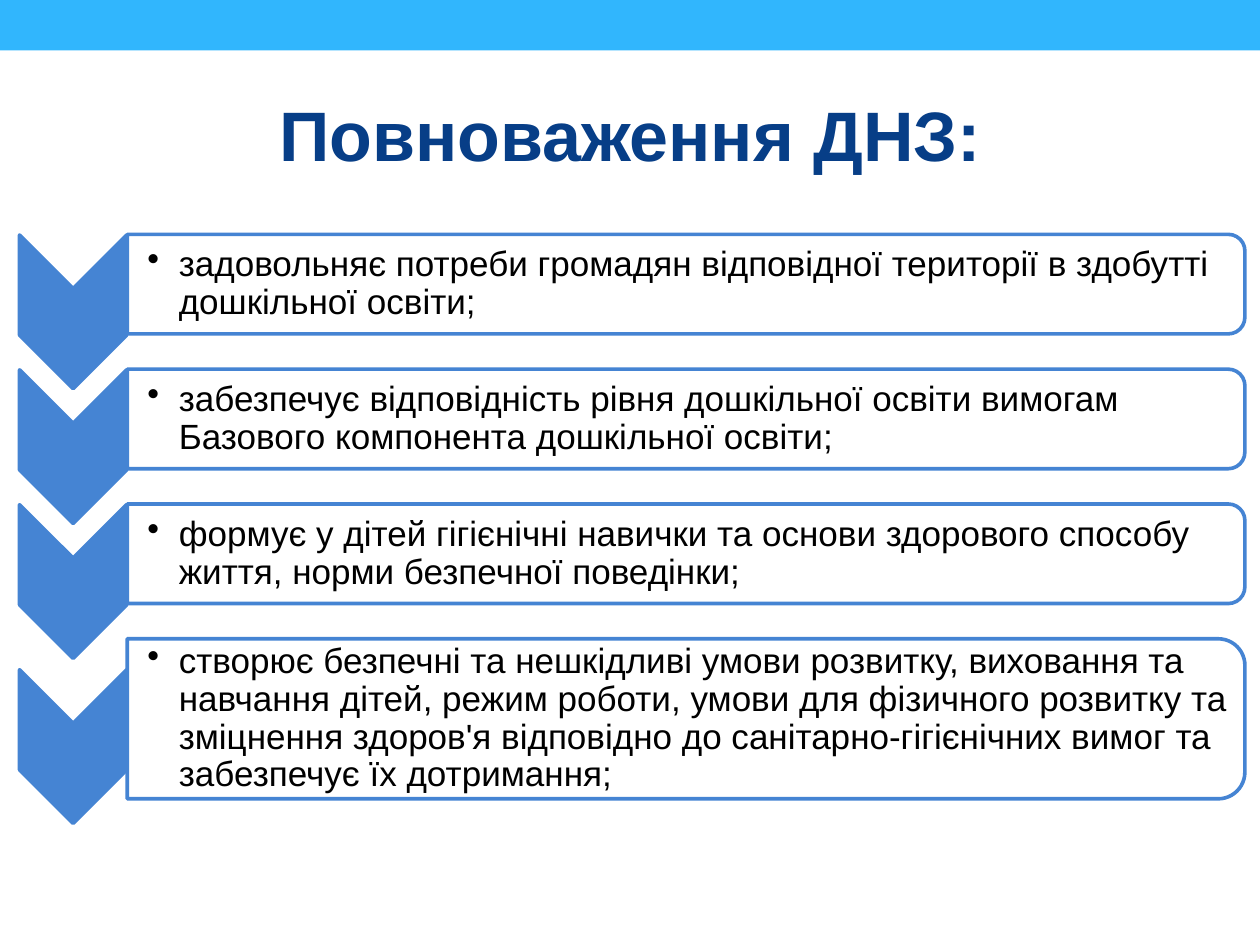
"""Build a slide listing the powers of a preschool as a chevron list."""
from lxml import etree
from pptx import Presentation
from pptx import util as u
from pptx.dml.color import RGBColor
from pptx.enum import shapes, text
from pptx.oxml.ns import qn

HUES = {"bar": "31B6FD", "blue": "4584D3", "white": "FFFFFF",
        "title": "073E87", "black": "000000"}
ITEMS = [
    ("задовольняє потреби громадян відповідної території в здобутті "
     "дошкільної освіти;", 0.79),
    ("забезпечує відповідність рівня дошкільної освіти вимогам "
     "Базового компонента дошкільної освіти;", 0.79),
    ("формує у дітей гігієнічні навички та основи здорового способу "
     "життя, норми безпечної поведінки;", 0.79),
    ("створює безпечні та нешкідливі умови розвитку, виховання та "
     "навчання дітей, режим роботи, умови для фізичного розвитку та "
     "зміцнення здоров'я відповідно до санітарно-гігієнічних вимог та "
     "забезпечує їх дотримання;", 1.27),
]
TOP, GAP = 1.86, 0.28
LEFT, WIDE = 1.01, 8.87


def write(frame, words, size=20, hue="black", bold=False, align=None,
          anchor=text.MSO_ANCHOR.MIDDLE, bullet=False):
    """Put one formatted paragraph into a text frame."""
    frame.word_wrap = True
    frame.auto_size = text.MSO_AUTO_SIZE.NONE
    frame.vertical_anchor = anchor
    para = frame.paragraphs[0]
    if bullet:
        props = para._p.get_or_add_pPr()
        props.set("marL", str(u.Inches(0.25)))
        props.set("indent", str(u.Inches(-0.25)))
        etree.SubElement(props, qn("a:buChar")).set("char", "•")
        para.level = 1
        para.line_spacing = 0.9
    para.alignment = align
    run = para.add_run()
    run.text = words
    run.font.name = "Arial"
    run.font.size = u.Pt(size)
    run.font.bold = bold
    run.font.color.rgb = RGBColor.from_string(HUES[hue])


class Deck:
    """Hold the presentation, its style and the current slide."""

    def __init__(self):
        """Start a deck with one title-only slide."""
        self.show = Presentation()
        self.show.slide_width = u.Inches(10)
        self.show.slide_height = u.Inches(7.5)
        self.slide = self.show.slides.add_slide(self.show.slide_layouts[5])

    def title(self, words, x, y, w, h):
        """Place and fill the title."""
        head = self.slide.shapes.title
        head.left, head.top = u.Inches(x), u.Inches(y)
        head.width, head.height = u.Inches(w), u.Inches(h)
        write(head.text_frame, words, size=40, hue="title", bold=True,
              align=text.PP_ALIGN.CENTER, anchor=text.MSO_ANCHOR.TOP)

    def shape(self, kind, x, y, w, h, fill, line=None, alpha=None, turn=0):
        """Draw a preset shape about its centre point."""
        item = self.slide.shapes.add_shape(
            kind, u.Inches(x - w / 2), u.Inches(y - h / 2),
            u.Inches(w), u.Inches(h))
        item.shadow.inherit = False
        item.rotation = turn
        item.fill.solid()
        item.fill.fore_color.rgb = RGBColor.from_string(HUES[fill])
        if alpha:
            tone = item._element.spPr.find(".//" + qn("a:srgbClr"))
            etree.SubElement(tone, qn("a:alpha")).set("val", str(alpha * 1000))
        if line:
            item.line.color.rgb = RGBColor.from_string(HUES[line])
            item.line.width = u.Pt(2.08)
        else:
            item.line.fill.background()

    def label(self, words, x, y, w, h):
        """Add a bulleted text box."""
        box = self.slide.shapes.add_textbox(
            u.Inches(x), u.Inches(y), u.Inches(w), u.Inches(h))
        frame = box.text_frame
        frame.margin_left = u.Inches(0.16)
        frame.margin_top = frame.margin_right = u.Inches(0.01)
        frame.margin_bottom = u.Inches(0.01)
        write(frame, words, bullet=True)

    def row(self, words, top, high):
        """Draw a chevron, its panel and the panel's text."""
        kinds = shapes.MSO_SHAPE
        mid = top + high / 2
        self.shape(kinds.CHEVRON, 0.58, mid + 0.22, 1.22, 0.85,
                   "blue", "blue", turn=90)
        self.shape(kinds.ROUND_2_SAME_RECTANGLE, LEFT + WIDE / 2, mid,
                   high, WIDE, "white", "blue", alpha=90, turn=90)
        self.label(words, LEFT, top + 0.04, WIDE - 0.04, high - 0.08)


def main():
    """Build and save the slide."""
    deck = Deck()
    deck.shape(shapes.MSO_SHAPE.RECTANGLE, 5, 0.2, 10, 0.4, "bar")
    top = TOP
    for words, high in ITEMS:
        deck.row(words, top, high)
        top += high + GAP
    deck.title("Повноваження ДНЗ:", 0, 0.68, 10, 1.45)
    deck.show.save("out.pptx")


if __name__ == "__main__":
    main()
